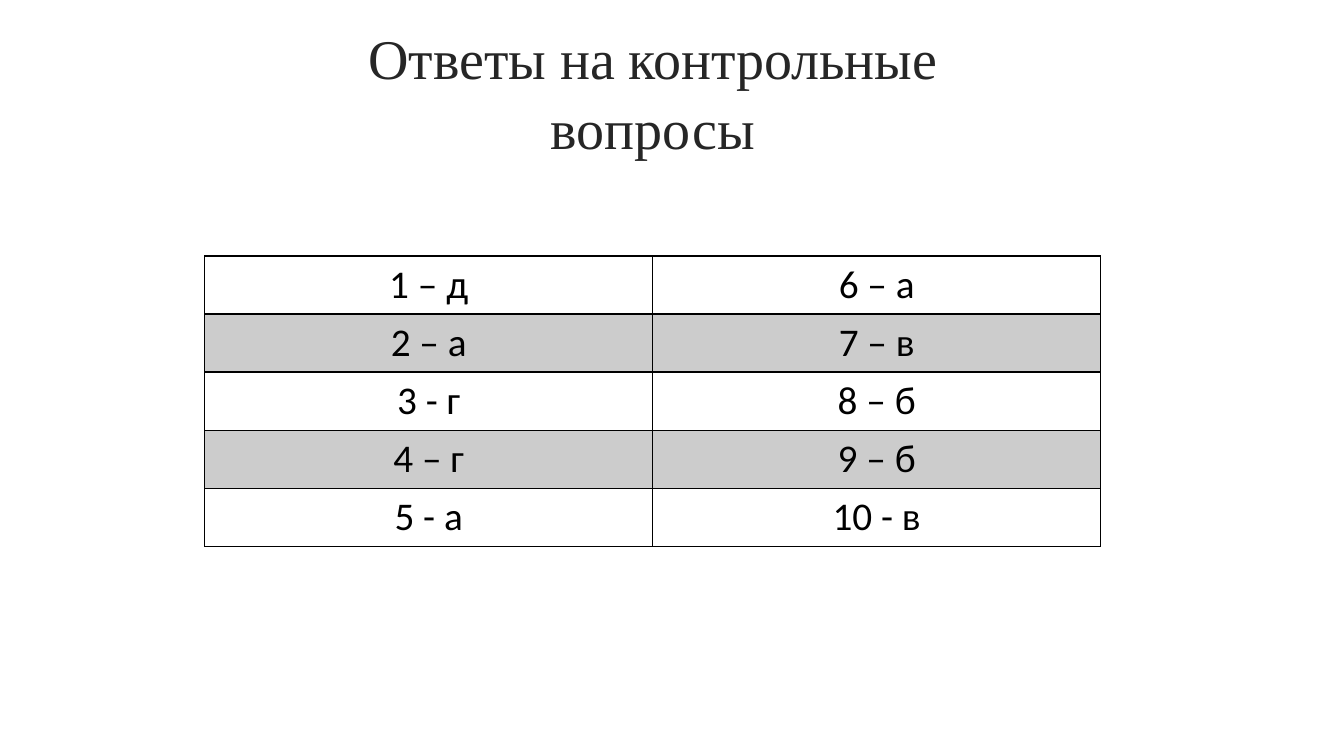
from lxml.etree import SubElement
from pptx import Presentation
from pptx.dml.color import RGBColor
from pptx.enum.text import MSO_ANCHOR, PP_ALIGN
from pptx.oxml.ns import qn
from pptx.util import Inches, Pt

COLORS = {"title": "262626", "text": "000000", "line": "000000", "band": "CCCCCC"}
WIDE, HIGH = 13.33, 7.5
TITLE = "Ответы на контрольные вопросы"
ANSWERS = [
    ("1 – д", "6 – а"),
    ("2 – а", "7 – в"),
    ("3 - г", "8 – б"),
    ("4 – г", "9 – б"),
    ("5 - а", "10 - в"),
]


def style(para, name, size, color):
    para.alignment = PP_ALIGN.CENTER
    for run in para.runs:
        run.font.name = name
        run.font.size = Pt(size)
        run.font.color.rgb = RGBColor.from_string(COLORS[color])


def edge(cell, side, width):
    line = SubElement(cell._tc.get_or_add_tcPr(), qn("a:ln" + side), w=str(Pt(width)))
    fill = SubElement(line, qn("a:solidFill"))
    SubElement(fill, qn("a:srgbClr"), val=COLORS["line"])


def add_title(slide, box):
    frame = slide.shapes.add_textbox(*map(Inches, box)).text_frame
    frame.word_wrap = True
    frame.vertical_anchor = MSO_ANCHOR.BOTTOM
    frame.text = TITLE
    para = frame.paragraphs[0]
    para.line_spacing = 1.04
    style(para, "Times New Roman", 40, "title")


def add_answers(slide, box):
    rows, cols = len(ANSWERS), len(ANSWERS[0])
    table = slide.shapes.add_table(rows, cols, *map(Inches, box)).table
    table.first_row = table.horz_banding = False
    for row, texts in enumerate(ANSWERS):
        for col, text in enumerate(texts):
            cell = table.cell(row, col)
            cell.text_frame.text = text
            style(cell.text_frame.paragraphs[0], "Calibri", 28, "text")
            for side in "LRTB":
                edge(cell, side, 2 if row == 0 and side == "B" else 1)
            if row % 2:
                cell.fill.solid()
                cell.fill.fore_color.rgb = RGBColor.from_string(COLORS["band"])
            else:
                cell.fill.background()


def main():
    deck = Presentation()
    deck.slide_width, deck.slide_height = Inches(WIDE), Inches(HIGH)
    slide = deck.slides.add_slide(deck.slide_layouts[6])
    add_answers(slide, (2.03, 2.54, WIDE * 2 / 3, 2.83))
    add_title(slide, (2.7, 1.12, 7.55, 0.52))
    deck.save("out.pptx")


if __name__ == "__main__":
    main()
